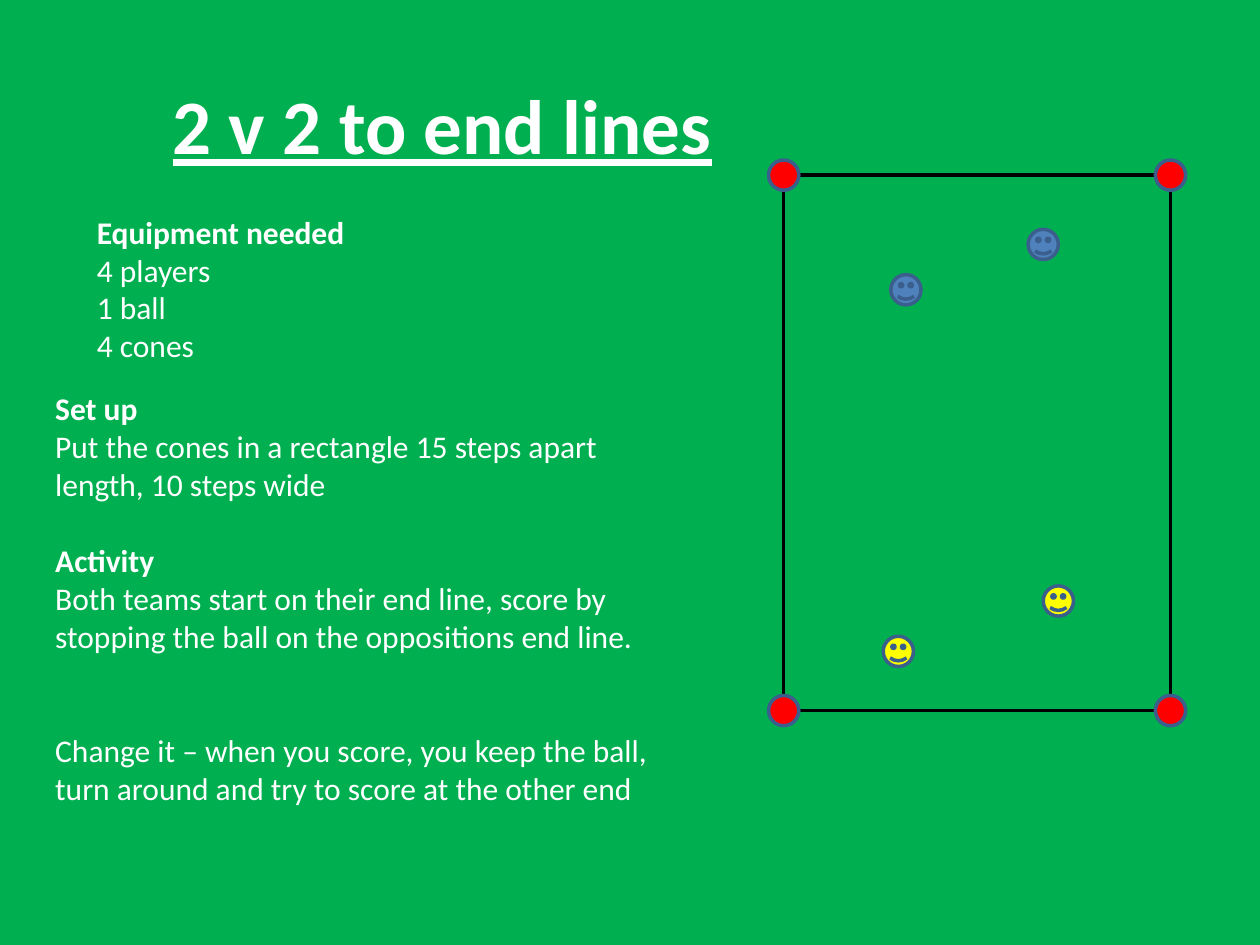
from dataclasses import dataclass
from itertools import product

from pptx import Presentation
from pptx import util as u
from pptx.dml import color
from pptx.enum import shapes, text

COLOURS = {
    "grass": "00B050",
    "text": "FFFFFF",
    "pitch_line": "000000",
    "outline": "3A5F8C",
    "cone": "FF0000",
    "blue_team": "4F81BD",
    "yellow_team": "FFFF00",
}
MARKER_SIZE = 0.24
PITCH_LEFT, PITCH_TOP, PITCH_WIDTH, PITCH_HEIGHT = 6.22, 1.39, 3.07, 4.25
BODY_FORMAT = {"name": "Calibri", "size": u.Pt(18)}
TITLE_FORMAT = {"name": "Calibri", "size": u.Pt(44), "bold": True, "underline": True}


@dataclass
class Line:
    words: str
    bold: bool = False
    lines_before: int = 0


@dataclass
class Player:
    team: str
    left: float
    top: float


EQUIPMENT = [
    Line("Equipment needed", bold=True),
    Line("4 players"),
    Line("1 ball"),
    Line("4 cones"),
]
INSTRUCTIONS = [
    Line("Set up", bold=True),
    Line("Put the cones in a rectangle 15 steps apart length, 10 steps wide"),
    Line("Activity", bold=True, lines_before=1),
    Line("Both teams start on their end line, score by stopping the ball "
         "on the oppositions end line."),
    Line("Change it – when you score, you keep the ball, turn around "
         "and try to score at the other end", lines_before=2),
]
PLAYERS = [
    Player("blue_team", 7.07, 2.18),
    Player("blue_team", 8.16, 1.82),
    Player("yellow_team", 7.01, 5.05),
    Player("yellow_team", 8.28, 4.65),
]


def rgb(name: str) -> color.RGBColor:
    return color.RGBColor.from_string(COLOURS[name])


def format_font(font, values: dict) -> None:
    for attribute, value in values.items():
        setattr(font, attribute, value)
    font.color.rgb = rgb("text")


def place(item, left: float, top: float, width: float, height: float) -> None:
    item.left, item.top = u.Inches(left), u.Inches(top)
    item.width, item.height = u.Inches(width), u.Inches(height)


def add_title(page, words: str) -> None:
    title = page.shapes.title
    place(title, 0.35, 0.18, 6.32, 1.61)
    title.text_frame.vertical_anchor = text.MSO_ANCHOR.MIDDLE
    para = title.text_frame.paragraphs[0]
    para.alignment = text.PP_ALIGN.CENTER
    span = para.add_run()
    span.text = words
    format_font(span.font, TITLE_FORMAT)


def add_text(page, lines: list[Line], left: float, top: float,
             width: float, height: float) -> None:
    box = page.shapes.add_textbox(*map(u.Inches, (left, top, width, height)))
    frame = box.text_frame
    frame.word_wrap = True
    for index, line in enumerate(lines):
        para = frame.add_paragraph() if index else frame.paragraphs[0]
        para.space_before = u.Pt(22 * line.lines_before)
        span = para.add_run()
        span.text = line.words
        format_font(span.font, {**BODY_FORMAT, "bold": line.bold})


def add_outlined(page, kind, fill: str, outline: str, left: float, top: float,
                 width: float, height: float) -> None:
    shape = page.shapes.add_shape(kind, *map(u.Inches, (left, top, width, height)))
    shape.shadow.inherit = False
    shape.fill.solid()
    shape.fill.fore_color.rgb = rgb(fill)
    shape.line.color.rgb = rgb(outline)
    shape.line.width = u.Pt(2)


def add_marker(page, kind, fill: str, left: float, top: float) -> None:
    add_outlined(page, kind, fill, "outline", left, top, MARKER_SIZE, MARKER_SIZE)


def add_pitch(page) -> None:
    add_outlined(page, shapes.MSO_SHAPE.RECTANGLE, "grass", "pitch_line",
                 PITCH_LEFT, PITCH_TOP, PITCH_WIDTH, PITCH_HEIGHT)
    corners = product((PITCH_LEFT, PITCH_LEFT + PITCH_WIDTH),
                      (PITCH_TOP, PITCH_TOP + PITCH_HEIGHT))
    for x, y in corners:
        add_marker(page, shapes.MSO_SHAPE.OVAL, "cone",
                   x - MARKER_SIZE / 2, y - MARKER_SIZE / 2)
    for player in PLAYERS:
        add_marker(page, shapes.MSO_SHAPE.SMILEY_FACE, player.team,
                   player.left, player.top)


def main() -> None:
    deck = Presentation()
    deck.slide_width, deck.slide_height = u.Inches(10), u.Inches(7.5)
    page = deck.slides.add_slide(deck.slide_layouts[5])
    page.background.fill.solid()
    page.background.fill.fore_color.rgb = rgb("grass")
    add_title(page, "2 v 2 to end lines")
    add_text(page, EQUIPMENT, 0.67, 1.64, 5.2, 1.92)
    add_pitch(page)
    add_text(page, INSTRUCTIONS, 0.34, 3.04, 5, 4.04)
    deck.save("out.pptx")


if __name__ == "__main__":
    main()
